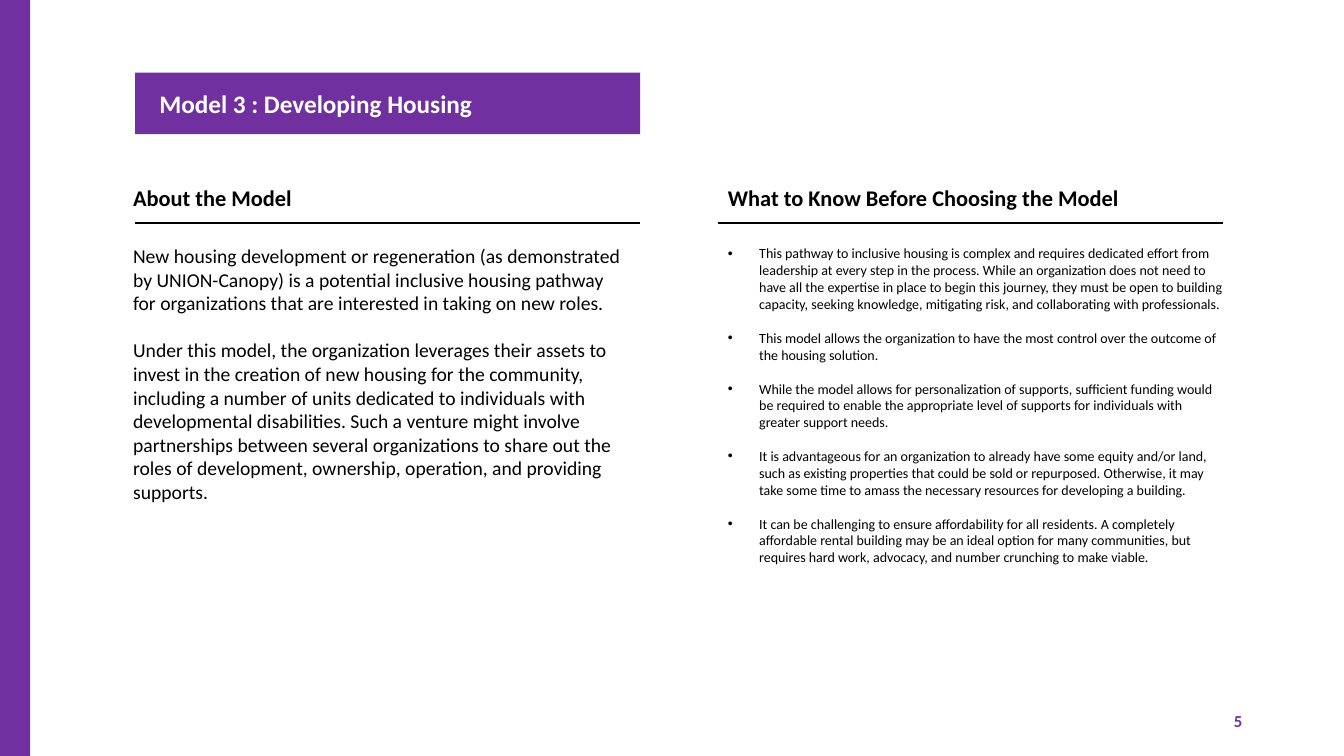
from lxml.etree import SubElement
from pptx import Presentation
from pptx.dml.color import RGBColor
from pptx.enum.shapes import MSO_CONNECTOR, MSO_SHAPE
from pptx.enum.text import MSO_ANCHOR, MSO_AUTO_SIZE, PP_ALIGN
from pptx.oxml.ns import qn
from pptx.util import Inches, Pt

PURPLE = "7030A0"
BLACK = "000000"
WHITE = "FFFFFF"
COMPARISON_LAYOUT = 4

ABOUT = [
    "New housing development or regeneration (as demonstrated by UNION-Canopy) is a potential "
    "inclusive housing pathway for organizations that are interested in taking on new roles.",
    "Under this model, the organization leverages their assets to invest in the creation of new "
    "housing for the community, including a number of units dedicated to individuals with "
    "developmental disabilities. Such a venture might involve partnerships between several "
    "organizations to share out the roles of development, ownership, operation, and providing "
    "supports.",
]
CONSIDERATIONS = [
    "This pathway to inclusive housing is complex and requires dedicated effort from leadership "
    "at every step in the process. While an organization does not need to have all the expertise "
    "in place to begin this journey, they must be open to building capacity, seeking knowledge, "
    "mitigating risk, and collaborating with professionals.",
    "This model allows the organization to have the most control over the outcome of the housing "
    "solution.",
    "While the model allows for personalization of supports, sufficient funding would be required "
    "to enable the appropriate level of supports for individuals with greater support needs.",
    "It is advantageous for an organization to already have some equity and/or land, such as "
    "existing properties that could be sold or repurposed. Otherwise, it may take some time to "
    "amass the necessary resources for developing a building.",
    "It can be challenging to ensure affordability for all residents. A completely affordable "
    "rental building may be an ideal option for many communities, but requires hard work, "
    "advocacy, and number crunching to make viable.",
]


def colour(value):
    return RGBColor.from_string(value)


class SlideBuilder:
    font_name = "Calibri"
    bullet_indent = Inches(0.31)

    def __init__(self, slide):
        self.slide = slide

    def bar(self, left, top, width, height):
        shape = self.slide.shapes.add_shape(
            MSO_SHAPE.RECTANGLE, Inches(left), Inches(top), Inches(width), Inches(height))
        shape.shadow.inherit = False
        shape.fill.solid()
        shape.fill.fore_color.rgb = colour(PURPLE)
        shape.line.fill.background()

    def rule(self, left, top, width):
        connector = self.slide.shapes.add_connector(
            MSO_CONNECTOR.STRAIGHT, Inches(left), Inches(top), Inches(left + width), Inches(top))
        connector.line.color.rgb = colour(BLACK)
        connector.line.width = Pt(1.75)
        SubElement(connector.element.spPr, qn("a:effectLst"))

    def placeholder(self, index, box, texts, size, **style):
        shape = self.slide.placeholders[index]
        shape.left, shape.top, shape.width, shape.height = map(Inches, box)
        shape.element.getparent().append(shape.element)
        self.fill_text(shape.text_frame, texts, size, **style)

    def text_box(self, box, texts, size, **style):
        shape = self.slide.shapes.add_textbox(*map(Inches, box))
        self.fill_text(shape.text_frame, texts, size, **style)

    def fill_text(self, frame, texts, size, font_colour=BLACK, bold=False, bulleted=False,
                  gap=0, anchor=MSO_ANCHOR.TOP, align=PP_ALIGN.LEFT):
        frame.word_wrap = True
        frame.auto_size = MSO_AUTO_SIZE.NONE
        frame.vertical_anchor = anchor
        for number, text in enumerate(texts):
            paragraph = frame.add_paragraph() if number else frame.paragraphs[0]
            paragraph.alignment = align
            paragraph.space_before = Pt(gap if number else 0)
            self.bullet(paragraph, bulleted)
            run = paragraph.add_run()
            run.text = text
            run.font.name = self.font_name
            run.font.size = Pt(size)
            run.font.bold = bold
            run.font.color.rgb = colour(font_colour)

    def bullet(self, paragraph, bulleted):
        properties = paragraph._p.get_or_add_pPr()
        indent = self.bullet_indent if bulleted else 0
        properties.set("marL", str(indent))
        properties.set("indent", str(-indent))
        if bulleted:
            SubElement(properties, qn("a:buFont"), typeface="Arial")
            SubElement(properties, qn("a:buChar"), char="•")
        else:
            SubElement(properties, qn("a:buNone"))


def main():
    presentation = Presentation()
    presentation.slide_width = Inches(13.33)
    presentation.slide_height = Inches(7.5)
    slide = presentation.slides.add_slide(presentation.slide_layouts[COMPARISON_LAYOUT])
    builder = SlideBuilder(slide)

    builder.bar(1.34, 0.72, 5.01, 0.61)
    builder.placeholder(0, (1.48, 0.72, 4.87, 0.61), ["Model 3 : Developing Housing"], 18,
                        font_colour=WHITE, bold=True, anchor=MSO_ANCHOR.MIDDLE)
    builder.bar(-0.03, 0, 0.33, 7.5)

    builder.placeholder(1, (1.22, 1.78, 3.25, 0.64), ["About the Model"], 16, bold=True)
    builder.placeholder(3, (7.12, 1.78, 5.27, 0.64),
                        ["What to Know Before Choosing the Model"], 16, bold=True)
    for left in (1.34, 7.12):
        builder.rule(left, 2.21, 5.01)
    builder.placeholder(2, (1.22, 2.37, 5.13, 3.16), ABOUT, 14, gap=17)
    builder.placeholder(4, (7.12, 2.38, 5.13, 4.48), CONSIDERATIONS, 10, gap=12.2, bulleted=True)

    builder.text_box((9.42, 6.95, 3, 0.4), ["5"], 12, font_colour=PURPLE, bold=True,
                     anchor=MSO_ANCHOR.MIDDLE, align=PP_ALIGN.RIGHT)
    presentation.save("out.pptx")


if __name__ == "__main__":
    main()
